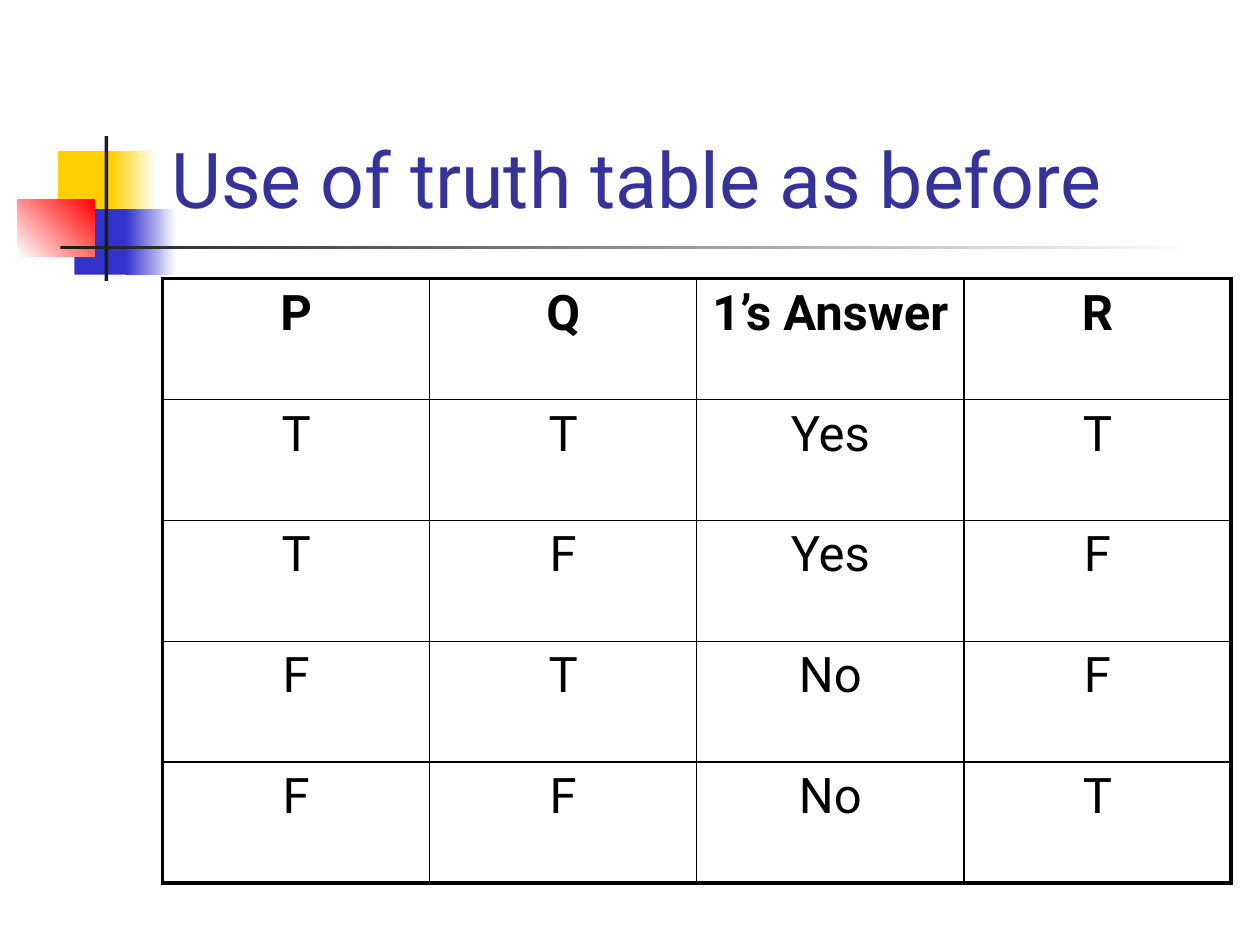
"""Build a slide with a truth table beside a block ornament."""
from dataclasses import dataclass
from typing import Any, Optional

from lxml import etree
from pptx import Presentation
from pptx.dml.color import RGBColor
from pptx.enum.shapes import MSO_SHAPE
from pptx.enum.text import MSO_ANCHOR, PP_ALIGN
from pptx.oxml.ns import qn
from pptx.util import Inches, Pt

RECT = MSO_SHAPE.RECTANGLE
BOTTOM = MSO_ANCHOR.BOTTOM
CENTER = PP_ALIGN.CENTER
LEFT = PP_ALIGN.LEFT

GOLD = RGBColor(0xFF, 0xCF, 0x01)
BLUE = RGBColor(0x33, 0x33, 0xCC)
RED = RGBColor(0xFF, 0x00, 0x00)
DARK = RGBColor(0x1C, 0x1C, 0x1C)
NAVY = RGBColor(0x33, 0x33, 0x99)
BLACK = RGBColor(0x00, 0x00, 0x00)
WHITE = RGBColor(0xFF, 0xFF, 0xFF)

FONT = "Roboto"
THIN, THICK = Pt(1), Pt(2.25)
COL, ROW = Inches(2.12), Inches(0.96)


@dataclass(frozen=True)
class Block:
    left: float
    top: float
    width: float
    height: float
    color: RGBColor
    end: Optional[RGBColor] = None
    angle: float = 0


BLOCKS = (
    Block(0.46, 1.2, 0.48, 0.52, GOLD),
    Block(0.88, 1.2, 0.36, 0.52, GOLD, WHITE),
    Block(0.59, 1.66, 0.46, 0.52, BLUE),
    Block(1, 1.66, 0.4, 0.52, BLUE, WHITE),
    Block(0.14, 1.58, 0.61, 0.46, WHITE, RED, 45),
    Block(0.83, 1.08, 0.03, 1.15, DARK),
    Block(0.48, 1.95, 9, 0.03, DARK, WHITE),
)

ROWS = (
    ("P", "Q", "1’s Answer", "R"),
    ("T", "T", "Yes", "T"),
    ("T", "F", "Yes", "F"),
    ("F", "T", "No", "F"),
    ("F", "F", "No", "T"),
)

TITLE = {"size": Pt(44), "name": FONT, "bold": False}
BODY = {"size": Pt(28), "name": FONT, "bold": False}
HEAD = {**BODY, "bold": True}


def draw_block(slide: Any, block: Block) -> None:
    shape = slide.shapes.add_shape(
        RECT, Inches(block.left), Inches(block.top),
        Inches(block.width), Inches(block.height))
    shape.shadow.inherit = False
    shape.line.fill.background()
    if block.end is None:
        shape.fill.solid()
        shape.fill.fore_color.rgb = block.color
        return
    shape.fill.gradient()
    shape.fill.gradient_angle = block.angle
    for stop, color in zip(shape.fill.gradient_stops, (block.color, block.end)):
        stop.color.rgb = color


def write(frame: Any, text: str, style: dict[str, Any], color: RGBColor,
          align: Any) -> None:
    para = frame.paragraphs[0]
    para.alignment = align
    run = para.add_run()
    run.text = text
    for key, value in style.items():
        setattr(run.font, key, value)
    run.font.color.rgb = color


def draw_title(slide: Any, text: str) -> None:
    box = slide.shapes.add_textbox(
        Inches(1.26), Inches(0.23), Inches(8.52), Inches(1.6))
    box.text_frame.word_wrap = True
    box.text_frame.vertical_anchor = BOTTOM
    write(box.text_frame, text, TITLE, NAVY, LEFT)


def add_edge(cell: Any, side: str, width: int) -> None:
    props = cell._tc.get_or_add_tcPr()
    line = etree.SubElement(props, qn(f"a:ln{side}"), w=str(width))
    fill = etree.SubElement(line, qn("a:solidFill"))
    etree.SubElement(fill, qn("a:srgbClr"), val=str(BLACK))


def draw_table(slide: Any, rows: tuple[tuple[str, ...], ...]) -> None:
    high, wide = len(rows), len(rows[0])
    table = slide.shapes.add_table(
        high, wide, Inches(1.29), Inches(2.21), COL * wide, ROW * high).table
    for flag in ("first_row", "horz_banding"):
        setattr(table, flag, False)
    for col in table.columns:
        col.width = COL
    for row in table.rows:
        row.height = ROW
    for i, texts in enumerate(rows):
        for j, text in enumerate(texts):
            cell = table.cell(i, j)
            outer = {"L": j == 0, "R": j == wide - 1,
                     "T": i == 0, "B": i == high - 1}
            for side, edge in outer.items():
                add_edge(cell, side, THICK if edge else THIN)
            cell.fill.background()
            write(cell.text_frame, text, BODY if i else HEAD, BLACK, CENTER)


def main() -> None:
    deck = Presentation()
    deck.slide_width, deck.slide_height = Inches(10), Inches(7.5)
    slide = deck.slides.add_slide(deck.slide_layouts[6])
    for block in BLOCKS:
        draw_block(slide, block)
    draw_title(slide, "Use of truth table as before")
    draw_table(slide, ROWS)
    deck.save("out.pptx")


if __name__ == "__main__":
    main()
